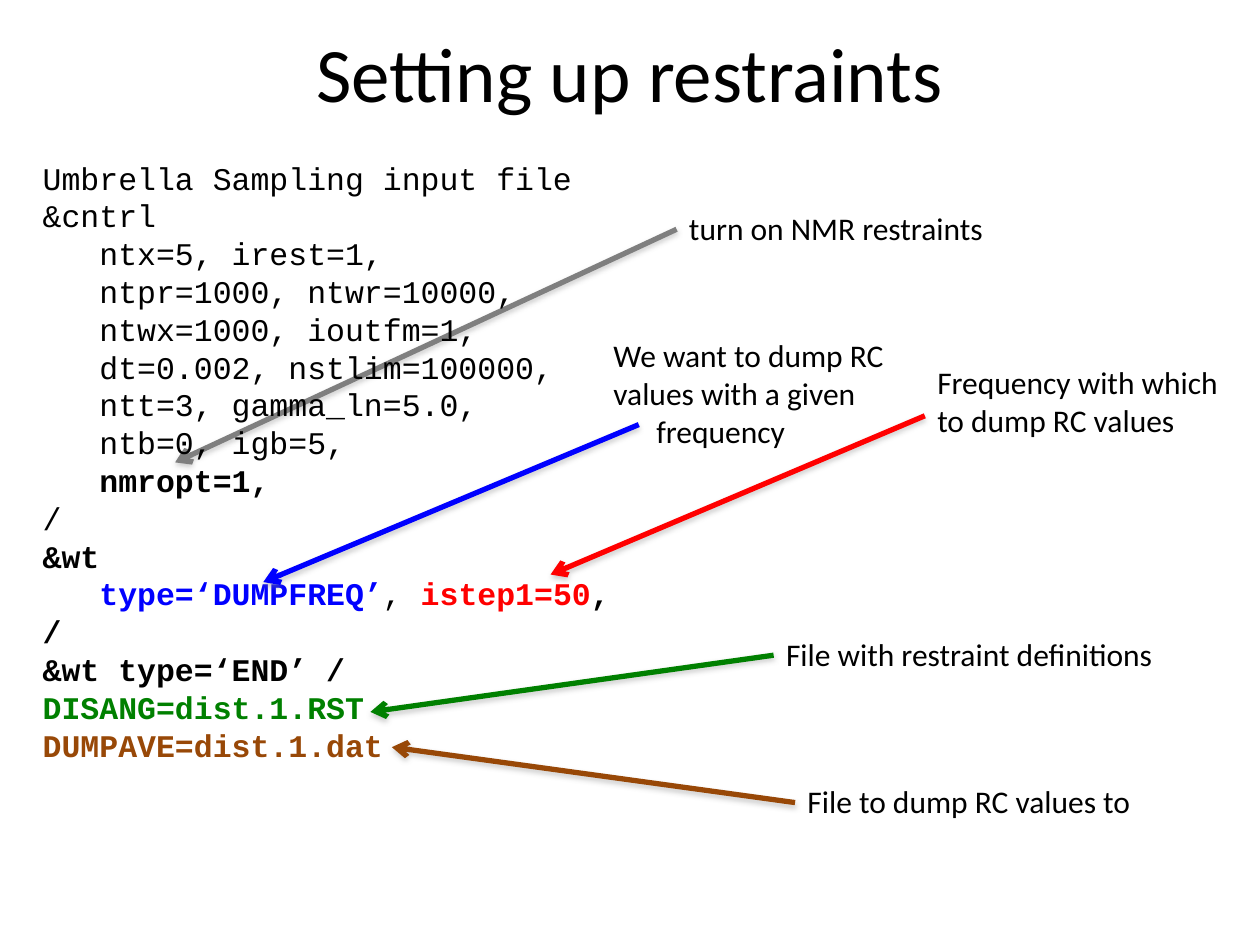
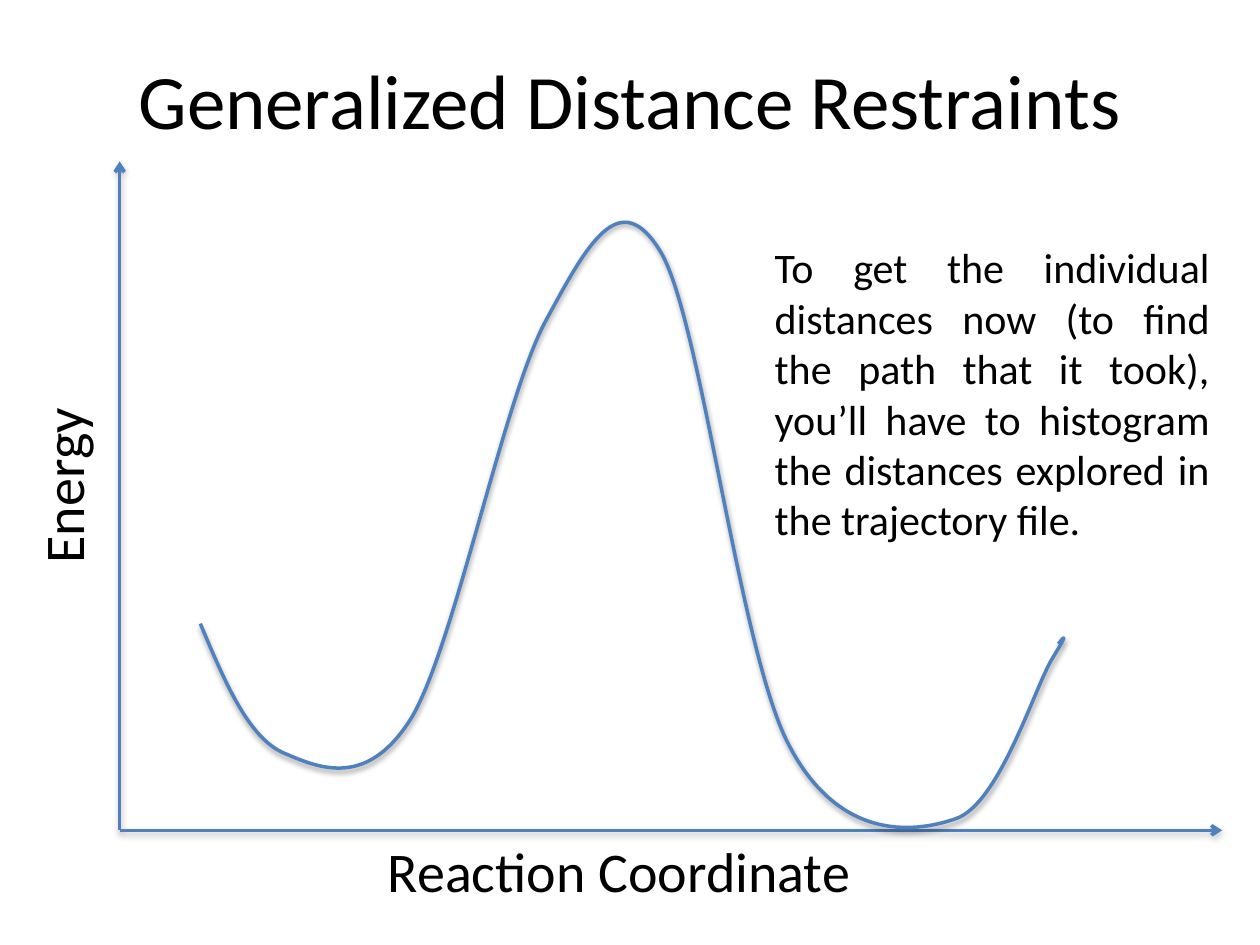
from itertools import chain
from lxml import etree
from pptx import Presentation
from pptx.dml.color import RGBColor
from pptx.enum.shapes import MSO_CONNECTOR as Link
from pptx.enum.text import MSO_ANCHOR as Anchor, PP_ALIGN as Align
from pptx.oxml import parse_xml
from pptx.oxml.ns import nsdecls, qn
from pptx.util import Inches, Pt

BLACK = RGBColor(0x00, 0x00, 0x00)
GRAY = RGBColor(0x7F, 0x7F, 0x7F)
SHADE = RGBColor(0x80, 0x80, 0x80)
BLUE = RGBColor(0x00, 0x00, 0xFF)
RED = RGBColor(0xFF, 0x00, 0x00)
GREEN = RGBColor(0x00, 0x80, 0x00)
BROWN = RGBColor(0x98, 0x48, 0x07)
STEEL = RGBColor(0x4F, 0x81, 0xBD)
SANS, MONO = "Calibri", "Courier New"
TAB = 0.45

CODE = [
    (0, [("Umbrella Sampling input file", BLACK, False)]),
    (0, [("&cntrl", BLACK, False)]),
    (TAB, [("ntx=5, irest=1,", BLACK, False)]),
    (TAB, [("ntpr=1000, ntwr=10000,", BLACK, False)]),
    (TAB, [("ntwx=1000, ioutfm=1,", BLACK, False)]),
    (TAB, [("dt=0.002, nstlim=100000,", BLACK, False)]),
    (TAB, [("ntt=3, gamma_ln=5.0,", BLACK, False)]),
    (TAB, [("ntb=0, igb=5,", BLACK, False)]),
    (TAB, [("nmropt=1,", BLACK, True)]),
    (0, [("/", BLACK, False)]),
    (0, [("&wt", BLACK, True)]),
    (TAB, [("type=‘DUMPFREQ’", BLUE, True), (", ", BLACK, False),
           ("istep1=50", RED, True), (",", BLACK, True)]),
    (0, [("/", BLACK, True)]),
    (0, [("&wt type=‘END’ /", BLACK, True)]),
    (0, [("DISANG=dist.1.RST", GREEN, True)]),
    (0, [("DUMPAVE=dist.1.dat", BROWN, True)]),
]

NOTES = [
    ([(0, "turn on NMR restraints")],
     (5.37, 1.61, 2.56, 0.4), (5.37, 1.82), (1.39, 3.67), GRAY),
    ([(0, "We want to dump RC"), (0, "values with a given"), (0.34, "frequency")],
     (4.77, 2.62, 2.38, 1.01), (5.07, 3.37), (2.09, 4.62), BLUE),
    ([(0, "Frequency with which"), (0, "to dump RC values")],
     (7.34, 2.83, 2.45, 0.71), (7.34, 3.3), (4.37, 4.56), RED),
    ([(0, "File with restraint definitions")],
     (6.14, 4.99, 3.14, 0.4), (6.14, 5.2), (2.94, 5.65), GREEN),
    ([(0, "File to dump RC values to")],
     (6.31, 6.16, 2.79, 0.4), (6.31, 6.37), (3.11, 5.93), BROWN),
]

ADVICE = ("To get the individual distances now (to find the path that it took), "
          "you’ll have to histogram the distances explored in the trajectory file.")
ORIGIN, RIGHT, TOP = (0.95, 6.59), (9.7, 6.59), (0.95, 1.28)
START = (1.59, 4.95)
CURVE = [
    ((1.78, 5.4), (1.97, 5.86), (2.26, 5.98)),
    ((2.54, 6.1), (2.92, 6.26), (3.27, 5.69)),
    ((3.61, 5.11), (4, 3.16), (4.33, 2.55)),
    ((4.66, 1.94), (4.92, 1.45), (5.25, 2.01)),
    ((5.57, 2.57), (5.87, 5.17), (6.26, 5.91)),
    ((6.65, 6.66), (7.23, 6.62), (7.58, 6.5)),
    ((7.93, 6.39), (8.21, 5.46), (8.35, 5.23)),
    ((8.49, 5), (8.44, 5.06), (8.4, 5.11)),
]


def add_slide(deck, title, top, height):
    slide = deck.slides.add_slide(deck.slide_layouts[5])
    head = slide.shapes.title
    head.left, head.top, head.width, head.height = map(Inches, (0.5, top, 9, height))
    head.text_frame.text = title
    head.text_frame.vertical_anchor = Anchor.MIDDLE
    style(head.text_frame.paragraphs[0], 44, align=Align.CENTER)
    return slide


def style(para, size, face=SANS, align=Align.LEFT):
    para.alignment = align
    para.font.size, para.font.name = Pt(size), face
    para.font.color.rgb = BLACK


def add_text(slide, box, lines, size, face=SANS, align=Align.LEFT, wrap=True):
    shape = slide.shapes.add_textbox(*map(Inches, box))
    frame = shape.text_frame
    frame.word_wrap = wrap
    for i, (indent, runs) in enumerate(lines):
        para = frame.add_paragraph() if i else frame.paragraphs[0]
        style(para, size, face, align)
        if indent:
            para._p.get_or_add_pPr().set("marL", str(Inches(indent)))
        if isinstance(runs, str):
            para.add_run().text = runs
            continue
        for text, color, bold in runs:
            run = para.add_run()
            run.text = text
            run.font.color.rgb, run.font.bold = color, bold
    return shape


def add_shade(shape, color):
    shape._element.spPr.append(parse_xml(
        f'<a:effectLst {nsdecls("a")}><a:outerShdw blurRad="40000" dist="20000" '
        f'dir="5400000" rotWithShape="0"><a:srgbClr val="{color}">'
        '<a:alpha val="38000"/></a:srgbClr></a:outerShdw></a:effectLst>'))


def add_arrow(slide, start, end, color, width):
    line = slide.shapes.add_connector(Link.STRAIGHT, *map(Inches, start + end))
    line.line.color.rgb, line.line.width = color, Pt(width)
    etree.SubElement(line.line._get_or_add_ln(), qn("a:tailEnd"), type="arrow")
    add_shade(line, SHADE)


def add_note(slide, lines, box, start, end, color):
    add_arrow(slide, start, end, color, 3)
    add_text(slide, box, lines, 18, wrap=False)


def add_curve(slide):
    pen = slide.shapes.build_freeform(*map(Inches, START))
    spots = [tuple(map(Inches, spot)) for spot in chain.from_iterable(CURVE)]
    pen.add_line_segments(spots, close=False)
    shape = pen.convert_to_shape()
    parts = list(shape._element.spPr.iter(qn("a:lnTo")))
    for i in range(0, len(parts), 3):
        bend = etree.Element(qn("a:cubicBezTo"))
        parts[i].addprevious(bend)
        for part in parts[i:i + 3]:
            bend.append(part[0])
            part.getparent().remove(part)
    shape.fill.background()
    shape.line.color.rgb, shape.line.width = STEEL, Pt(2)
    add_shade(shape, BLACK)


def main():
    deck = Presentation()
    deck.slide_width, deck.slide_height = Inches(10), Inches(7.5)

    setup = add_slide(deck, "Setting up restraints", 0.13, 0.88)
    add_note(setup, *NOTES[0])
    add_text(setup, (0.24, 1.21, 5.41, 4.95), CODE, 18, MONO)
    for note in NOTES[1:]:
        add_note(setup, *note)

    graph = add_slide(deck, "Generalized Distance Restraints", 0.3, 0.97)
    for end in (RIGHT, TOP):
        add_arrow(graph, ORIGIN, end, STEEL, 2)
    add_text(graph, (2.61, 6.59, 4.61, 0.64), [(0, "Reaction Coordinate")], 32,
             align=Align.CENTER)
    label = add_text(graph, (-0.22, 3.53, 1.44, 0.64), [(0, "Energy")], 32, wrap=False)
    label.rotation = 270
    add_curve(graph)
    add_text(graph, (6.05, 1.87, 3.65, 2.52), [(0, ADVICE)], 24, align=Align.JUSTIFY)

    deck.save("out.pptx")


if __name__ == "__main__":
    main()
